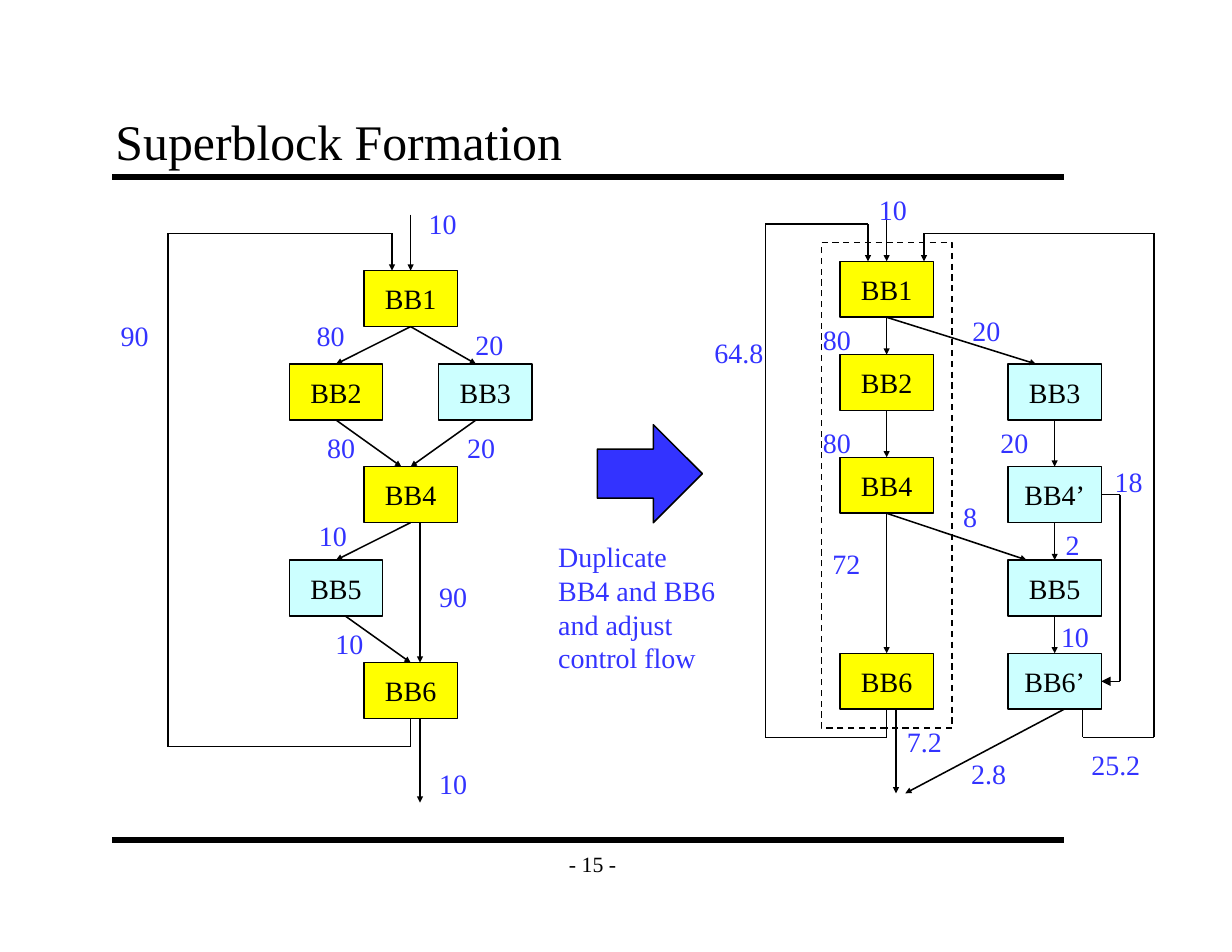
from itertools import pairwise

from lxml.etree import SubElement
from pptx import Presentation
from pptx.dml.color import RGBColor
from pptx.enum.dml import MSO_LINE
from pptx.enum.shapes import MSO_CONNECTOR, MSO_SHAPE
from pptx.enum.text import MSO_ANCHOR as ANCHOR, PP_ALIGN as ALIGN
from pptx.oxml.ns import qn
from pptx.util import Pt

PX = 9525  # EMU per px, 96 px to the inch
FONT = "Times New Roman"
BLACK = RGBColor(0x00, 0x00, 0x00)
BLUE = RGBColor(0x33, 0x33, 0xFF)
YELLOW = RGBColor(0xFF, 0xFF, 0x00)
CYAN = RGBColor(0xCC, 0xFF, 0xFF)

NODE_W, NODE_H = 80, 48
LABEL_H = 38
LABEL_WIDTHS = {1: 32, 2: 43, 3: 49, 4: 61}  # by number of characters

# Nodes: name -> (x, y, fill). Edges: (source, x on its bottom, target, x on its top).
# Routes: (points, size of the arrowhead). Labels: (text, x, y).
BEFORE = {
    "nodes": {
        "BB1": (224, 64, YELLOW), "BB2": (160, 144, YELLOW),
        "BB3": (288, 144, CYAN), "BB4": (224, 232, YELLOW),
        "BB5": (160, 312, CYAN), "BB6": (224, 400, YELLOW),
    },
    "edges": [
        ("BB1", 40, "BB2", 40), ("BB1", 40, "BB3", 32),
        ("BB2", 40, "BB4", 32), ("BB3", 32, "BB4", 40),
        ("BB4", 40, "BB5", 40), ("BB5", 48, "BB6", 40),
        ("BB4", 48, "BB6", 48),
    ],
    "routes": [
        ([(264, 16), (264, 64)], "sm"),
        ([(272, 448), (272, 520)], "sm"),
        ([(264, 448), (264, 472), (56, 472), (56, 32), (248, 32), (248, 64)], "sm"),
    ],
    "labels": [
        ("10", 270, 4), ("90", 6, 100), ("80", 174, 100), ("20", 310, 108),
        ("80", 183, 196), ("20", 303, 196), ("10", 176, 272),
        ("90", 279, 324), ("10", 190, 364), ("10", 279, 484),
    ],
}
AFTER = {
    "nodes": {
        "BB1": (120, 64, YELLOW), "BB2": (120, 144, YELLOW),
        "BB4": (120, 232, YELLOW), "BB6": (120, 400, YELLOW),
        "BB3": (264, 152, CYAN), "BB4’": (264, 240, CYAN),
        "BB5": (264, 320, CYAN), "BB6’": (264, 400, CYAN),
    },
    "edges": [
        ("BB1", 40, "BB2", 40), ("BB2", 40, "BB4", 40),
        ("BB4", 40, "BB6", 40), ("BB1", 40, "BB3", 24),
        ("BB4", 40, "BB5", 16), ("BB3", 40, "BB4’", 40),
        ("BB4’", 40, "BB5", 40), ("BB5", 40, "BB6’", 40),
    ],
    "routes": [
        ([(160, 16), (160, 64)], "sm"),
        ([(168, 448), (168, 520)], "sm"),
        ([(312, 448), (176, 520)], "sm"),
        ([(160, 448), (160, 472), (56, 472), (56, 32), (144, 32), (144, 64)], "sm"),
        ([(328, 448), (328, 472), (389, 472), (389, 40), (192, 40), (192, 64)], "sm"),
        ([(344, 264), (360, 264), (360, 424), (344, 424)], "med"),
    ],
    "labels": [
        ("10", 144, 0), ("64.8", 3, 123), ("80", 96, 112), ("20", 224, 104),
        ("80", 96, 200), ("20", 248, 200), ("18", 346, 233), ("8", 216, 263),
        ("2", 304, 287), ("72", 104, 304), ("10", 300, 366),
        ("7.2", 168, 456), ("2.8", 223, 484), ("25.2", 326, 476),
    ],
}


def emu(*lengths):
    return [length * PX for length in lengths]


def add_span(para, text, size, color):
    span = para.add_run()
    span.text = text
    span.font.name = FONT
    span.font.size = Pt(size)
    span.font.color.rgb = color


def add_text(page, box, text, size=18, color=BLUE, align=ALIGN.LEFT, wrap=False):
    frame = page.shapes.add_textbox(*emu(*box)).text_frame
    frame.word_wrap = wrap
    para = frame.paragraphs[0]
    para.alignment = align
    add_span(para, text, size, color)
    return frame


def add_line(page, start, end, width=1, head=None):
    line = page.shapes.add_connector(MSO_CONNECTOR.STRAIGHT, *emu(*start, *end))
    line.line.color.rgb = BLACK
    line.line.width = Pt(width)
    if head:
        SubElement(line.line._get_or_add_ln(), qn("a:tailEnd"),
                   type="triangle", w=head, len=head)
    SubElement(line._element.spPr, qn("a:effectLst"))


def add_block(page, kind, box, fill=None):
    shape = page.shapes.add_shape(kind, *emu(*box))
    shape.shadow.inherit = False
    shape.line.color.rgb = BLACK
    shape.line.width = Pt(1)
    if fill is None:
        shape.fill.background()
    else:
        shape.fill.solid()
        shape.fill.fore_color.rgb = fill
    return shape


def add_graph(page, left, top, graph):
    def place(x, y):
        return left + x, top + y

    # Basic blocks
    nodes = graph["nodes"]
    for name, (x, y, fill) in nodes.items():
        block = add_block(page, MSO_SHAPE.RECTANGLE, (*place(x, y), NODE_W, NODE_H), fill)
        frame = block.text_frame
        frame.word_wrap = False
        frame.vertical_anchor = ANCHOR.MIDDLE
        frame.paragraphs[0].alignment = ALIGN.CENTER
        add_span(frame.paragraphs[0], name, 18, BLACK)

    # Edges run from the bottom of one block to the top of another
    for source, out_x, target, in_x in graph["edges"]:
        x1, y1, _ = nodes[source]
        x2, y2, _ = nodes[target]
        add_line(page, place(x1 + out_x, y1 + NODE_H), place(x2 + in_x, y2), head="sm")

    # Entries, exits and loops
    for points, head in graph["routes"]:
        for start, end in pairwise(points):
            add_line(page, place(*start), place(*end),
                     head=head if end == points[-1] else None)

    # Execution counts
    for text, x, y in graph["labels"]:
        add_text(page, (*place(x, y), LABEL_WIDTHS[len(text)], LABEL_H), text)


def add_superblock_outline(page, box):
    outline = add_block(page, MSO_SHAPE.RECTANGLE, box)
    outline.line.dash_style = MSO_LINE.DASH


def add_step(page, left, top):
    add_block(page, MSO_SHAPE.RIGHT_ARROW, (left + 43, top, 90, 84), BLUE)
    frame = add_text(page, (left, top + 94, 156, 126), "Duplicate", wrap=True)
    for text in ("BB4 and BB6", "and adjust"):
        para = frame.add_paragraph()
        add_span(para, text, 18, BLUE)
    para.add_line_break()
    add_span(para, "control flow", 18, BLUE)


def add_frame(page, left, width):
    # Title, rules and page number
    title = page.shapes.title
    title.left, title.top, title.width, title.height = emu(left - 8, 88, width, 64)
    frame = title.text_frame
    frame.margin_left, frame.margin_right = emu(11, 11)
    frame.margin_top, frame.margin_bottom = emu(6, 6)
    frame.vertical_anchor = ANCHOR.BOTTOM
    frame.paragraphs[0].alignment = ALIGN.LEFT
    add_span(frame.paragraphs[0], "Superblock Formation", 32, BLACK)
    for y in (152, 720):
        add_line(page, (left, y), (left + width, y), width=4)
    number = add_text(page, (472, 720, 72, 40), "- 15 -", 14, BLACK, ALIGN.CENTER)
    number.vertical_anchor = ANCHOR.MIDDLE


def main():
    deck = Presentation()
    deck.slide_width, deck.slide_height = emu(1056, 816)
    page = deck.slides.add_slide(deck.slide_layouts[5])
    add_frame(page, 96, 816)
    add_graph(page, 88, 168, BEFORE)
    add_graph(page, 600, 160, AFTER)
    add_superblock_outline(page, (704, 208, 112, 416))
    add_step(page, 469, 364)
    deck.save("out.pptx")


if __name__ == "__main__":
    main()
